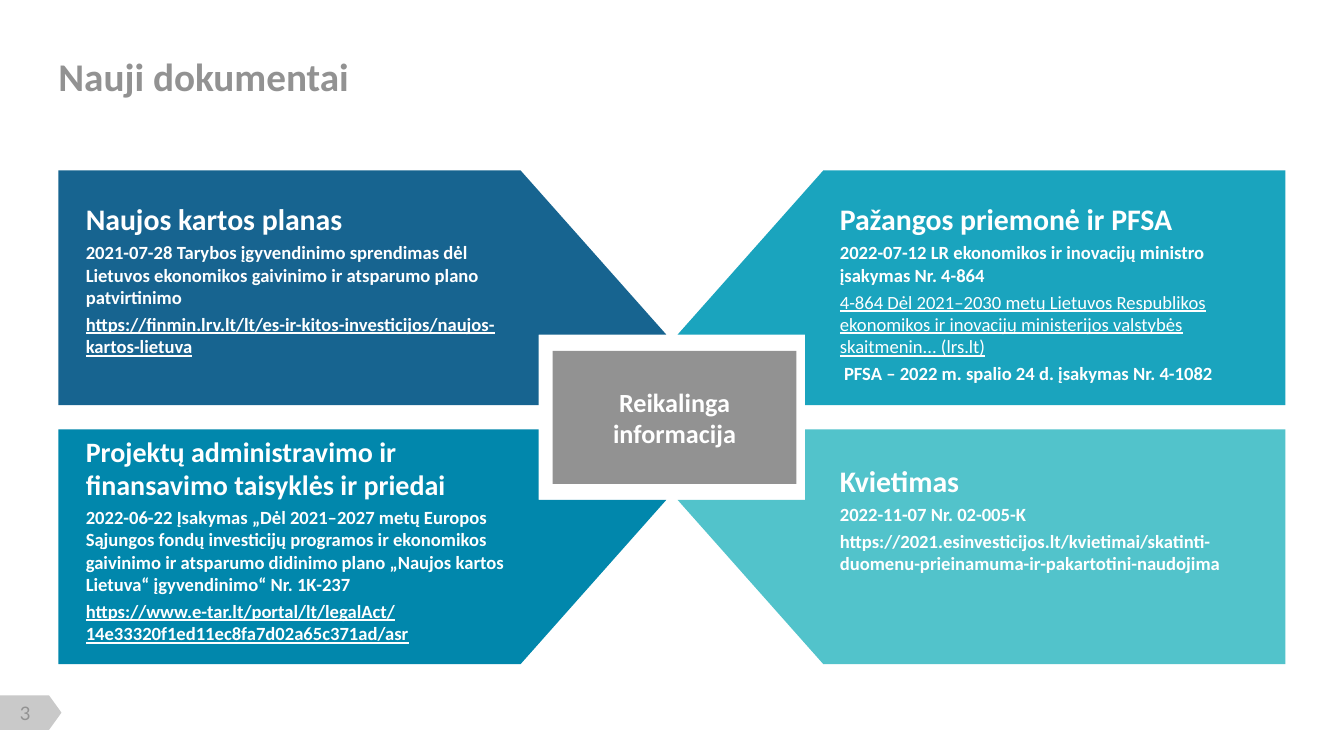
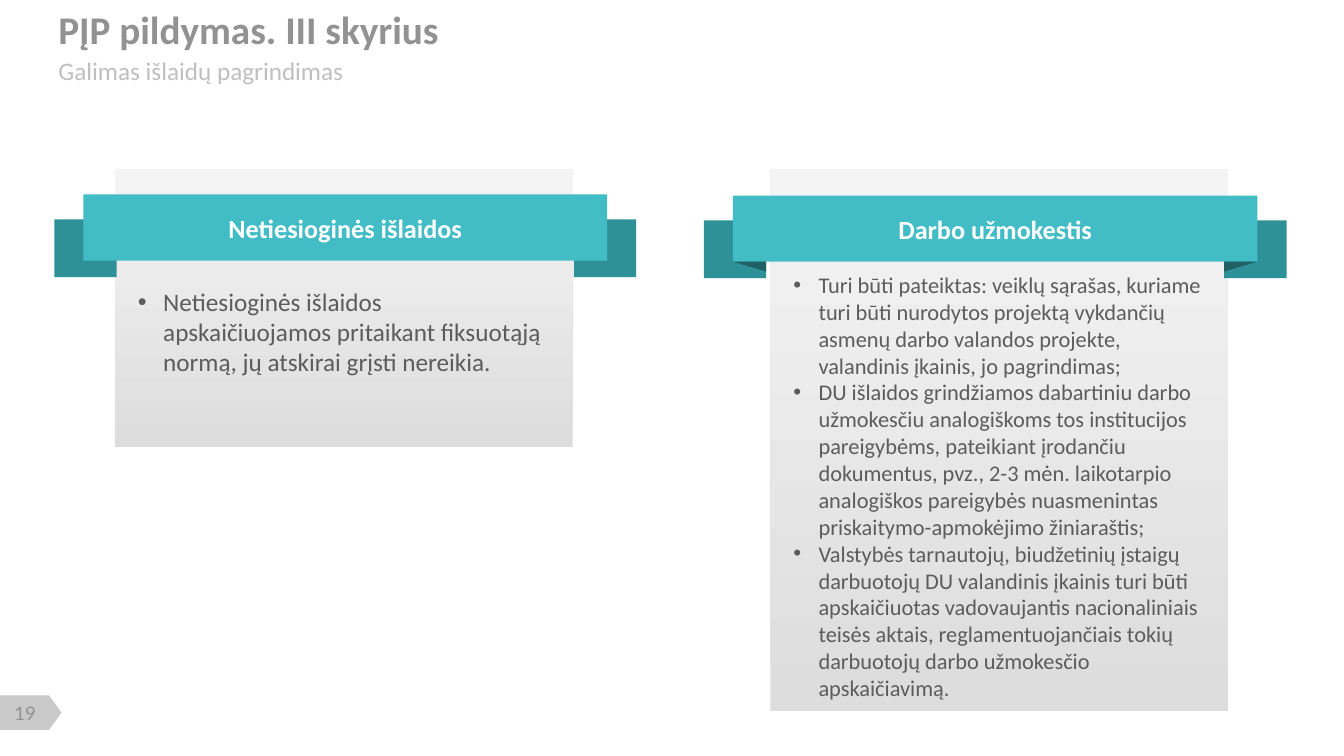
from collections import namedtuple

from lxml import etree
from pptx import Presentation
from pptx.dml.color import RGBColor
from pptx.enum.shapes import MSO_SHAPE as Shape
from pptx.enum.text import MSO_ANCHOR as Anchor, PP_ALIGN as Align
from pptx.oxml.ns import qn
from pptx.util import Inches, Pt

COLORS = {
    "white": "FFFFFF", "title": "929292", "subtitle": "BFBFBF", "body": "5C5C5C",
    "badge": "C9C9C9", "navy": "176490", "blue": "0187AC", "cyan": "1AA4BE",
    "aqua": "52C3CB", "ribbon": "42BDC6", "tail": "2E9198", "fold": "1F6165",
    "panel_low": "DDDDDD", "panel_high": "F4F4F4",
}
FONT, NUMBER_FONT = "Calibri", "Lato"
WIDTH, HEIGHT = 13.33, 7.5
MARGIN = 0.58

Box = namedtuple("Box", "left top width height")
Style = namedtuple("Style", "size color bold underline font",
                   defaults=("white", False, False, FONT))

TITLE = Style(28, "title", True)
SUBTITLE = Style(18, "subtitle")
NUMBER = Style(13.3, "title", font=NUMBER_FONT)
LABEL = Style(18.7, bold=True)
HEADING = Style(21.3, bold=True)
LONG_HEADING = Style(20, bold=True)
DETAIL = Style(13.3, bold=True)
LINK = Style(13.3, bold=True, underline=True)
LIGHT_LINK = Style(13.3, underline=True)


def rgb(name):
    return RGBColor.from_string(COLORS[name])


def inches(box):
    return [Inches(value) for value in box]


def part(box, x, y, width, height):
    """Box lying at the given shares of another box."""
    return Box(box.left + x * box.width, box.top + y * box.height,
               width * box.width, height * box.height)


def paint(shape, color):
    shape.shadow.inherit = False
    shape.fill.solid()
    shape.fill.fore_color.rgb = rgb(color)
    shape.line.fill.background()
    return shape


def add_block(page, kind, box, color):
    return paint(page.shapes.add_shape(kind, *inches(box)), color)


def add_outline(page, box, shares, color):
    points = [(Inches(box.left + x * box.width), Inches(box.top + y * box.height))
              for x, y in shares]
    builder = page.shapes.build_freeform(*points[0])
    builder.add_line_segments(points[1:], close=True)
    return paint(builder.convert_to_shape(), color)


def write(shape, lines, align=Align.LEFT, anchor=Anchor.TOP,
          insets=(0.1, 0.05, 0.1, 0.05), after=0, bullet=False, wrap=True):
    """Fill a shape with (text, style) paragraphs."""
    frame = shape.text_frame
    frame.word_wrap = wrap
    frame.vertical_anchor = anchor
    (frame.margin_left, frame.margin_top,
     frame.margin_right, frame.margin_bottom) = inches(insets)
    for index, (text, style) in enumerate(lines):
        para = frame.add_paragraph() if index else frame.paragraphs[0]
        para.alignment = align
        para.space_after = Pt(after)
        if bullet:
            add_bullet(para)
        span = para.add_run()
        span.text = text
        span.font.name = style.font
        span.font.size = Pt(style.size)
        span.font.bold = style.bold
        span.font.underline = style.underline
        span.font.color.rgb = rgb(style.color)


def add_bullet(para):
    props = para._p.get_or_add_pPr()
    props.set("marL", str(Inches(0.25)))
    props.set("indent", str(-Inches(0.25)))
    etree.SubElement(props, qn("a:buFont")).set("typeface", "Arial")
    etree.SubElement(props, qn("a:buChar")).set("char", "•")


def add_text(page, box, lines, **options):
    write(page.shapes.add_textbox(*inches(box)), lines, **options)


def add_page(deck, number, title, title_top):
    """Blank page with the shared title and number badge."""
    page = deck.slides.add_slide(deck.slide_layouts[6])
    badge = Box(0, 6.9, 0.61, 0.34)
    add_block(page, Shape.PENTAGON, badge, "badge").adjustments[0] = 0.36
    add_text(page, part(badge, 0.05, 0.2, 0.72, 0.65), [(number, NUMBER)],
             align=Align.CENTER, anchor=Anchor.MIDDLE, insets=(0, 0, 0, 0))
    add_text(page, Box(MARGIN, title_top, 12.2, 0.52), [(title, TITLE)],
             anchor=Anchor.MIDDLE, insets=(0, 0.05, 0.1, 0.05))
    return page


# Quadrants around a central box
QUADRANT = [(0, 0), (0.76, 0), (1, 0.7), (0.79, 0.7), (0.79, 1), (0, 1)]


def add_quadrant(page, box, color, lines, right, lower, text_top):
    outline = [(1 - x if right else x, 1 - y if lower else y) for x, y in QUADRANT]
    add_outline(page, box, outline, color)
    text_box = part(box, 0.267 if right else 0.045, text_top, 0.711, 0.7)
    add_text(page, text_box, lines, insets=(0, 0, 0, 0), after=3.3)


def add_documents_page(deck):
    page = add_page(deck, "3", "Nauji dokumentai", 0.49)
    width, height = 6.03, 2.33
    lefts = (MARGIN, WIDTH - MARGIN - width)
    tops = (1.69, 4.26)
    quadrants = [
        (0, 0, "navy", 0.13, [
            ("Naujos kartos planas", HEADING),
            ("2021-07-28 Tarybos įgyvendinimo sprendimas dėl Lietuvos ekonomikos "
             "gaivinimo ir atsparumo plano patvirtinimo", DETAIL),
            ("https://finmin.lrv.lt/lt/es-ir-kitos-investicijos/naujos-kartos-lietuva",
             LINK)]),
        (1, 0, "cyan", 0.13, [
            ("Pažangos priemonė ir PFSA", HEADING),
            ("2022-07-12 LR ekonomikos ir inovacijų ministro įsakymas Nr. 4-864",
             DETAIL),
            ("4-864 Dėl 2021–2030 metų Lietuvos Respublikos ekonomikos ir inovacijų "
             "ministerijos valstybės skaitmenin... (lrs.lt)", LIGHT_LINK),
            (" PFSA – 2022 m. spalio 24 d. įsakymas Nr. 4-1082", DETAIL)]),
        (0, 1, "blue", 0.02, [
            ("Projektų administravimo ir finansavimo taisyklės ir priedai",
             LONG_HEADING),
            ("2022-06-22 Įsakymas „Dėl 2021–2027 metų Europos Sąjungos fondų "
             "investicijų programos ir ekonomikos gaivinimo ir atsparumo didinimo "
             "plano „Naujos kartos Lietuva“ įgyvendinimo“ Nr. 1K-237", DETAIL),
            ("https://www.e-tar.lt/portal/lt/legalAct/"
             "14e33320f1ed11ec8fa7d02a65c371ad/asr", LINK)]),
        (1, 1, "aqua", 0.14, [
            ("Kvietimas", HEADING),
            ("2022-11-07 Nr. 02-005-K", DETAIL),
            ("https://2021.esinvesticijos.lt/kvietimai/skatinti-duomenu-prieinamuma-"
             "ir-pakartotini-naudojima", DETAIL)]),
    ]
    for column, row, color, text_top, lines in quadrants:
        add_quadrant(page, Box(lefts[column], tops[row], width, height),
                     color, lines, column == 1, row == 1, text_top)
    center = add_block(page, Shape.RECTANGLE, Box(5.48, 3.48, 2.42, 1.32), "title")
    write(center, [("Reikalinga informacija", LABEL)],
          align=Align.CENTER, anchor=Anchor.MIDDLE)


# Cards with a ribbon across the top
def add_panel(page, box):
    panel = add_block(page, Shape.RECTANGLE, box, "panel_low")
    panel.fill.gradient()
    panel.fill.gradient_angle = 90
    for stop, color in zip(panel.fill.gradient_stops, ("panel_low", "panel_high")):
        stop.color.rgb = rgb(color)


def add_ribbon(page, box, label, folded):
    tail = 0.107
    for x in (0, 1 - tail):
        add_block(page, Shape.RECTANGLE, part(box, x, 0.3, tail, 0.7), "tail")
    band = part(box, 0.05, 0, 0.9, 0.8)
    front = add_block(page, Shape.RECTANGLE, band, "ribbon")
    write(front, [(label, LABEL)], align=Align.CENTER, anchor=Anchor.MIDDLE,
          insets=(0.13, 0.07, 0.13, 0.07))
    if folded:
        for outer, inner in ((0.05, tail), (0.95, 1 - tail)):
            add_outline(page, box, [(outer, 0.8), (inner, 0.8), (inner, 0.92)], "fold")


def add_card(page, panel, ribbon, label, lines, size, text_top, folded):
    add_panel(page, panel)
    add_ribbon(page, ribbon, label, folded)
    text_box = Box(panel.left + 0.13, panel.top + text_top,
                   panel.width - 0.22, panel.height - text_top)
    style = Style(size, "body")
    add_text(page, text_box, [(line, style) for line in lines], bullet=True)


def add_costs_page(deck):
    page = add_page(deck, "19", "PĮP pildymas. III skyrius", 0.03)
    add_text(page, Box(MARGIN, 0.55, 6.68, 0.29),
             [("Galimas išlaidų pagrindimas", SUBTITLE)],
             anchor=Anchor.MIDDLE, insets=(0, 0, 0, 0), wrap=False)
    add_card(page, Box(1.14, 1.68, 4.54, 2.76), Box(0.54, 1.93, 5.77, 0.82),
             "Netiesioginės išlaidos",
             ["Netiesioginės išlaidos apskaičiuojamos pritaikant fiksuotąją normą, "
              "jų atskirai grįsti nereikia."], 18, 1.11, False)
    add_card(page, Box(7.64, 1.68, 4.54, 5.37), Box(6.98, 1.94, 5.78, 0.82),
             "Darbo užmokestis",
             ["Turi būti pateiktas: veiklų sąrašas, kuriame turi būti nurodytos "
              "projektą vykdančių asmenų darbo valandos projekte, valandinis įkainis, "
              "jo pagrindimas;",
              "DU išlaidos grindžiamos dabartiniu darbo užmokesčiu analogiškoms tos "
              "institucijos pareigybėms, pateikiant įrodančiu dokumentus, pvz., 2-3 "
              "mėn. laikotarpio analogiškos pareigybės nuasmenintas "
              "priskaitymo-apmokėjimo žiniaraštis;",
              "Valstybės tarnautojų, biudžetinių įstaigų darbuotojų DU valandinis "
              "įkainis turi būti apskaičiuotas vadovaujantis nacionaliniais teisės "
              "aktais, reglamentuojančiais tokių darbuotojų darbo užmokesčio "
              "apskaičiavimą."], 16, 0.96, True)


def main():
    deck = Presentation()
    deck.slide_width, deck.slide_height = Inches(WIDTH), Inches(HEIGHT)
    add_documents_page(deck)
    add_costs_page(deck)
    deck.save("out.pptx")


if __name__ == "__main__":
    main()
